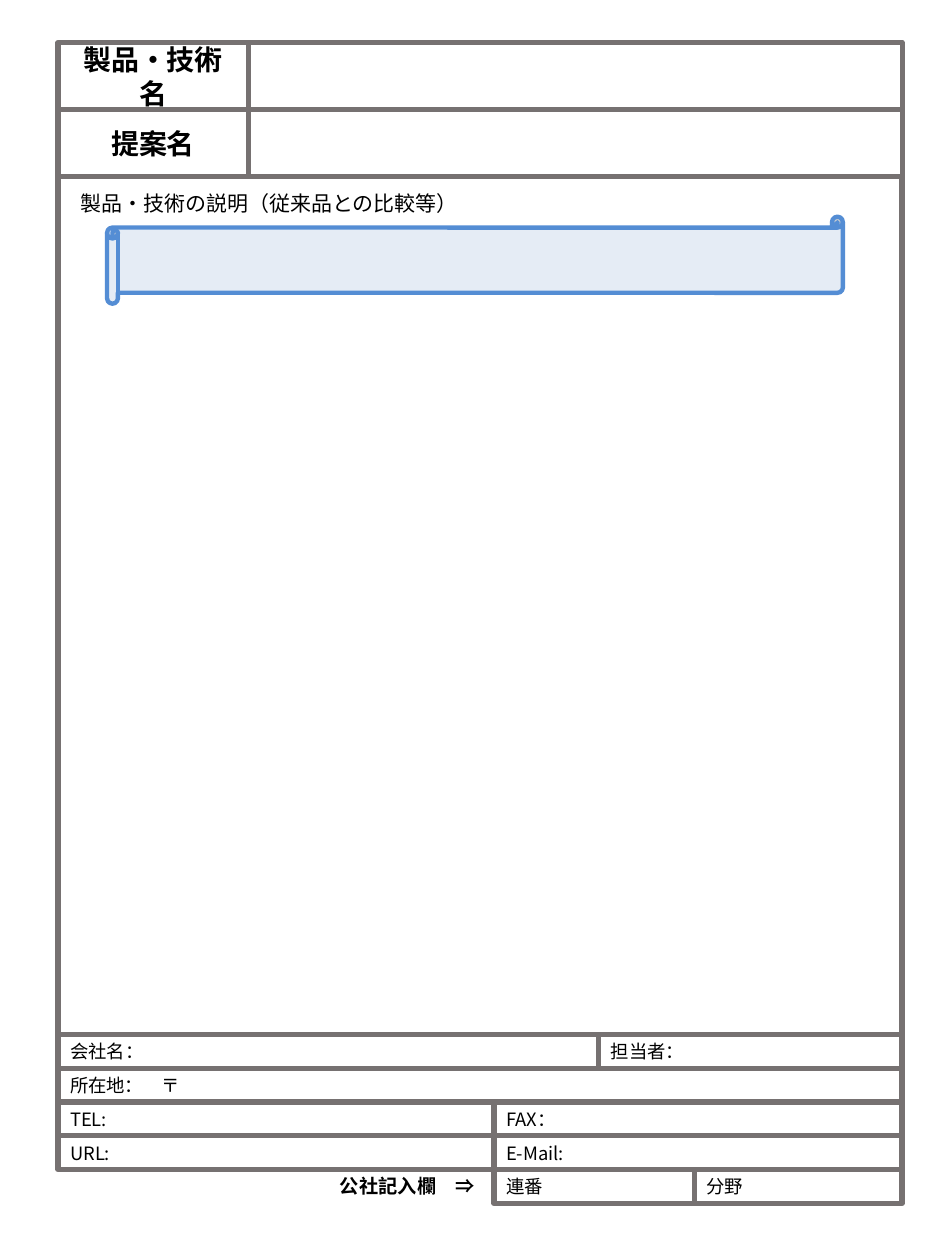
from lxml import etree
from pptx import Presentation
from pptx.dml.color import RGBColor
from pptx.enum.shapes import MSO_SHAPE
from pptx.enum.text import MSO_ANCHOR, MSO_AUTO_SIZE, PP_ALIGN
from pptx.oxml.ns import qn
from pptx.util import Inches, Pt

RECTANGLE = MSO_SHAPE.RECTANGLE
SCROLL = MSO_SHAPE.HORIZONTAL_SCROLL
MIDDLE = MSO_ANCHOR.MIDDLE
LEFT, CENTER = PP_ALIGN.LEFT, PP_ALIGN.CENTER
FIT_SHAPE = MSO_AUTO_SIZE.SHAPE_TO_FIT_TEXT

BLACK = RGBColor(0x00, 0x00, 0x00)
FRAME_GRAY = RGBColor(0x76, 0x71, 0x71)
SCROLL_FILL = RGBColor(0xDB, 0xE5, 0xF1)
SCROLL_LINE = RGBColor(0x54, 0x8D, 0xD4)
JAPANESE_FONT = "Noto Sans CJK JP"
LATIN_FONT = "Calibri"

# Column edges and row sizes of the form, in inches
FORM_LEFT, FORM_RIGHT = 0.46, 7.16
TITLE_SPLIT, COMPANY_SPLIT, CONTACT_SPLIT, OFFICE_SPLIT = 1.97, 4.75, 3.92, 5.51
FORM_TOP, TITLE_ROW = 0.34, 0.53
BODY_TOP, CONTACT_TOP, CONTACT_ROW = 1.4, 8.21, 0.268

TITLES = ["製品・技術名", "提案名"]
CONTACT_ROWS = [
    ([FORM_LEFT, COMPANY_SPLIT, FORM_RIGHT], ["会社名：", "担当者："]),
    ([FORM_LEFT, FORM_RIGHT], ["所在地：　〒"]),
    ([FORM_LEFT, CONTACT_SPLIT, FORM_RIGHT], ["TEL:", "FAX："]),
    ([FORM_LEFT, CONTACT_SPLIT, FORM_RIGHT], ["URL:", "E-Mail:"]),
    ([CONTACT_SPLIT, OFFICE_SPLIT, FORM_RIGHT], ["連番", "分野"]),
]


def write(frame, text, size, bold=False, align=LEFT, font=JAPANESE_FONT):
    frame.word_wrap = True
    paragraph = frame.paragraphs[0]
    paragraph.text = text
    paragraph.alignment = align
    for run in paragraph.runs:
        run.font.size = Pt(size)
        run.font.bold = bold
        run.font.name = font
        run.font.color.rgb = BLACK
        east_asian = etree.SubElement(run.font._element, qn("a:ea"))
        east_asian.set("typeface", JAPANESE_FONT)


def add_cell(slide, left, top, right, height, text="", size=10.5, bold=False, align=LEFT):
    cell = slide.shapes.add_shape(
        RECTANGLE, Inches(left), Inches(top), Inches(right - left), Inches(height))
    cell.shadow.inherit = False
    cell.fill.background()
    cell.line.color.rgb = FRAME_GRAY
    cell.line.width = Pt(3)
    if text:
        cell.text_frame.vertical_anchor = MIDDLE
        write(cell.text_frame, text, size, bold, align)


def add_row(slide, edges, top, height, texts, **style):
    for left, right, text in zip(edges, edges[1:], texts):
        add_cell(slide, left, top, right, height, text, **style)


def add_label(slide, left, top, width, height, text, size, **style):
    label = slide.shapes.add_textbox(
        Inches(left), Inches(top), Inches(width), Inches(height))
    write(label.text_frame, text, size, **style)
    label.text_frame.auto_size = FIT_SHAPE


def add_scroll(slide, left, top, width, height):
    scroll = slide.shapes.add_shape(
        SCROLL, Inches(left), Inches(top), Inches(width), Inches(height))
    scroll.shadow.inherit = False
    scroll.adjustments[0] = 0.125
    scroll.fill.solid()
    scroll.fill.fore_color.rgb = SCROLL_FILL
    color = scroll._element.spPr.find(qn("a:solidFill"))[0]
    etree.SubElement(color, qn("a:alpha")).set("val", "70000")
    scroll.line.color.rgb = SCROLL_LINE
    scroll.line.width = Pt(2.5)


def main():
    prs = Presentation()
    prs.slide_width, prs.slide_height = Inches(7.5), Inches(10)
    slide = prs.slides.add_slide(prs.slide_layouts[6])

    add_scroll(slide, 0.85, 1.72, 5.84, 0.69)
    add_label(slide, 0.54, 1.46, 6.35, 0.3, "製品・技術の説明（従来品との比較等）", 12)

    for row, title in enumerate(TITLES):
        add_row(slide, [FORM_LEFT, TITLE_SPLIT, FORM_RIGHT], FORM_TOP + row * TITLE_ROW,
                TITLE_ROW, [title, ""], size=16, bold=True, align=CENTER)

    add_cell(slide, FORM_LEFT, BODY_TOP, FORM_RIGHT, CONTACT_TOP - BODY_TOP)

    for row, (edges, texts) in enumerate(CONTACT_ROWS):
        add_row(slide, edges, CONTACT_TOP + row * CONTACT_ROW, CONTACT_ROW, texts)
    add_label(slide, 2.6, 9.27, 1.37, 0.29, "公社記入欄　⇒", 11, bold=True, font=LATIN_FONT)

    prs.save("out.pptx")


if __name__ == "__main__":
    main()
